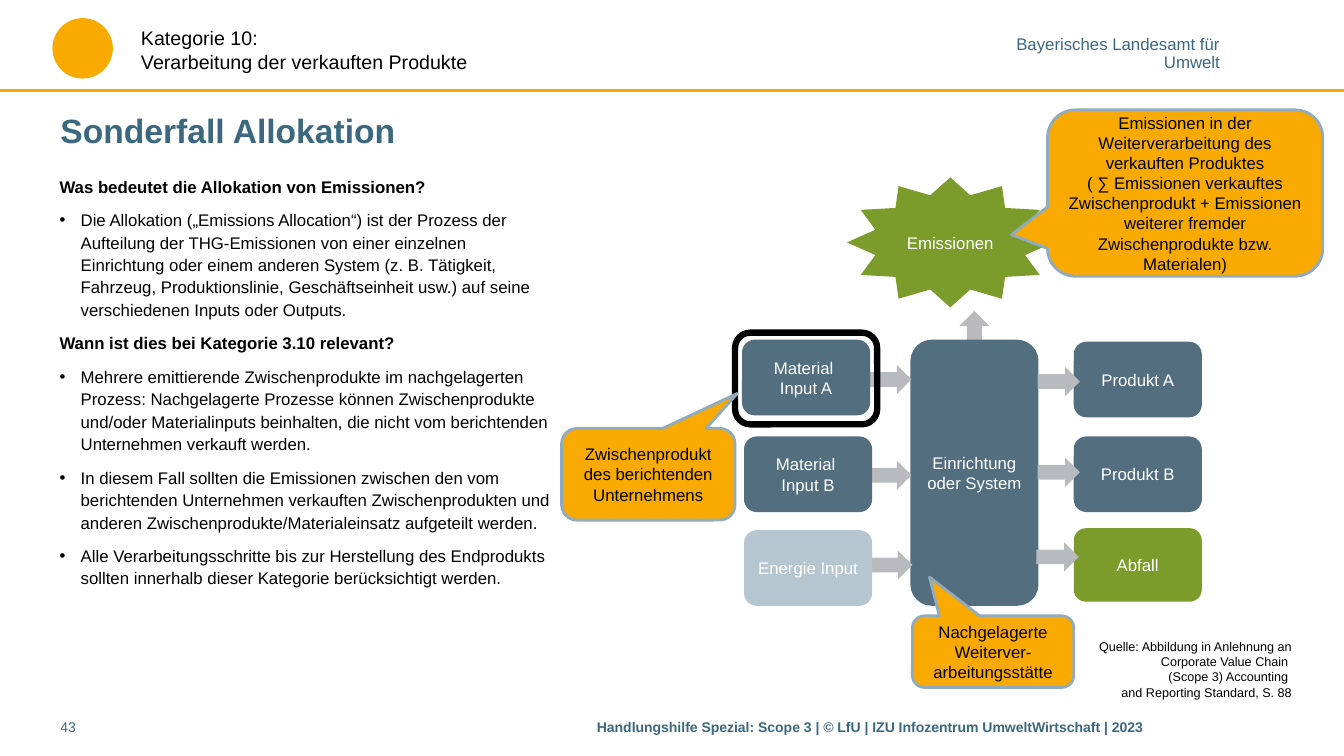
from lxml.etree import SubElement
from pptx import Presentation
from pptx.dml.color import RGBColor
from pptx.enum.shapes import MSO_CONNECTOR as CONNECTOR, MSO_SHAPE as SHAPE
from pptx.enum.text import MSO_ANCHOR as ANCHOR, MSO_AUTO_SIZE as AUTO_SIZE, PP_ALIGN as ALIGN
from pptx.oxml.ns import qn
from pptx.util import Inches, Pt

ORANGE, GREEN, SLATE, PALE = "F9AA00", "7B9C2A", "526E7F", "B6C6D0"
GREY, EDGE, BLUE, BLACK, WHITE = "B8BABD", "90ABBE", "3B687F", "000000", "FFFFFF"
BOX_WIDTH = 1.27
ARROW_SIZE = (0.42, 0.29)

BODY = [
    ("Was bedeutet die Allokation von Emissionen?", False),
    ("Die Allokation („Emissions Allocation“) ist der Prozess der Aufteilung der THG-Emissionen "
     "von einer einzelnen Einrichtung oder einem anderen System (z. B. Tätigkeit, Fahrzeug, "
     "Produktionslinie, Geschäftseinheit usw.) auf seine verschiedenen Inputs oder Outputs.", True),
    ("Wann ist dies bei Kategorie 3.10 relevant?", False),
    ("Mehrere emittierende Zwischenprodukte im nachgelagerten Prozess: Nachgelagerte Prozesse "
     "können Zwischenprodukte und/oder Materialinputs beinhalten, die nicht vom berichtenden "
     "Unternehmen verkauft werden.", True),
    ("In diesem Fall sollten die Emissionen zwischen den vom berichtenden Unternehmen verkauften "
     "Zwischenprodukten und anderen Zwischenprodukte/Materialeinsatz aufgeteilt werden.", True),
    ("Alle Verarbeitungsschritte bis zur Herstellung des Endprodukts sollten innerhalb dieser "
     "Kategorie berücksichtigt werden.", True),
]

INPUTS = [
    (7.36, 3.37, "Material \nInput A", SLATE),
    (7.38, 4.33, "Material \nInput B", SLATE),
    (7.38, 5.26, "Energie Input", PALE),
]
OUTPUTS = [
    (3.39, 0.75, "Produkt A", SLATE),
    (4.33, 0.75, "Produkt B", SLATE),
    (5.24, 0.73, "Abfall", GREEN),
]
INPUT_ARROWS = [(8.62, 3.62), (8.62, 4.57), (8.63, 5.46)]
OUTPUT_ARROWS = [(10.29, 3.64), (10.29, 4.54), (10.28, 5.38)]
CALLOUTS = [
    ((5.57, 4.25, 1.72, 0.91), (0.513, -0.881),
     "Zwischenprodukt des berichtenden Unternehmens"),
    ((10.39, 1.09, 2.73, 1.65), (-0.631, 0.25),
     "Emissionen in der Weiterverarbeitung des verkauften Produktes\n"
     "( ∑ Emissionen verkauftes Zwischenprodukt + Emissionen weiterer fremder "
     "Zwischenprodukte bzw. Materialen)"),
    ((9.05, 6.11, 1.6, 0.71), (-0.394, -1.042),
     "Nachgelagerte Weiterver-arbeitungsstätte"),
]


def rgb(color):
    return RGBColor.from_string(color)


def lengths(values):
    return [Inches(value) for value in values]


def set_values(target, values):
    for name, value in values.items():
        setattr(target, name, value)


def format_paragraph(paragraph, size, color, bold=False, **values):
    set_values(paragraph, values)
    set_values(paragraph.font, {"name": "Arial", "size": Pt(size), "bold": bold})
    paragraph.font.color.rgb = rgb(color)


def write(shape, text, size=12, color=BLACK, bold=False, align=ALIGN.LEFT, spacing=None,
          anchor=ANCHOR.TOP, side=0.1, edge=0.05, wrap=True):
    frame = shape.text_frame
    set_values(frame, {
        "word_wrap": wrap, "auto_size": AUTO_SIZE.NONE, "vertical_anchor": anchor,
        "margin_left": Inches(side), "margin_right": Inches(side),
        "margin_top": Inches(edge), "margin_bottom": Inches(edge),
    })
    frame.text = text
    for paragraph in frame.paragraphs:
        format_paragraph(paragraph, size, color, bold, alignment=align, line_spacing=spacing)


def add_text(slide, box, text, **values):
    shape = slide.shapes.add_textbox(*lengths(box))
    write(shape, text, **values)
    return shape


def add_figure(slide, kind, box, fill=None, text="", color=WHITE, line=None, width=2):
    shape = slide.shapes.add_shape(kind, *lengths(box))
    shape.shadow.inherit = False
    if fill:
        shape.fill.solid()
        shape.fill.fore_color.rgb = rgb(fill)
    else:
        shape.fill.background()
    if line:
        shape.line.color.rgb = rgb(line)
        shape.line.width = Pt(width)
    else:
        shape.line.fill.background()
    if text:
        write(shape, text, color=color, align=ALIGN.CENTER, anchor=ANCHOR.MIDDLE)
    return shape


def add_arrows(slide, positions):
    for position in positions:
        add_figure(slide, SHAPE.RIGHT_ARROW, position + ARROW_SIZE, GREY)


def add_callout(slide, box, tip, text):
    callout = add_figure(slide, SHAPE.ROUNDED_RECTANGULAR_CALLOUT, box, ORANGE, text, BLACK, EDGE)
    for index, value in enumerate(tip):
        callout.adjustments[index] = value


def add_bullet(paragraph):
    properties = paragraph._p.get_or_add_pPr()
    properties.set("marL", str(Inches(0.21)))
    properties.set("indent", str(-Inches(0.21)))
    SubElement(properties, qn("a:buFont"), typeface="Arial")
    SubElement(properties, qn("a:buChar"), char="•")


def add_header(slide):
    rule = slide.shapes.add_connector(CONNECTOR.STRAIGHT, *lengths((0, 0.9, 13.33, 0.9)))
    rule.line.color.rgb = rgb(ORANGE)
    rule.line.width = Pt(2)
    SubElement(rule._element.spPr, qn("a:effectLst"))
    add_text(slide, (10.07, 0.37, 2.03, 0.34), "Bayerisches Landesamt für\nUmwelt",
             color=BLUE, align=ALIGN.RIGHT, spacing=0.85, side=0, edge=0, wrap=False)
    add_figure(slide, SHAPE.OVAL, (0.52, 0.18, 0.6, 0.6), ORANGE)
    add_text(slide, (1.3, 0.21, 4.25, 0.57),
             "Kategorie 10:\nVerarbeitung der verkauften Produkte", size=14)


def add_title(slide, text):
    title = slide.shapes.title
    box = lengths((0.6, 1.02, 12.31, 0.55))
    set_values(title, dict(zip(("left", "top", "width", "height"), box)))
    write(title, text, size=24, color=BLUE, bold=True, anchor=ANCHOR.MIDDLE, side=0)


def add_body(slide):
    shape = add_text(slide, (0.59, 1.68, 4.89, 5.14),
                     "\n".join(text for text, _ in BODY), side=0)
    for index, (paragraph, (_, bulleted)) in enumerate(zip(shape.text_frame.paragraphs, BODY)):
        if bulleted:
            add_bullet(paragraph)
        format_paragraph(paragraph, 12, BLACK, not bulleted, line_spacing=Pt(16),
                         space_before=Pt(8 if index else 0))


def add_diagram(slide):
    rounded = SHAPE.ROUNDED_RECTANGLE
    up_arrow = add_figure(slide, SHAPE.RIGHT_ARROW, (9.42, 3.18, 0.49, 0.3), GREY)
    up_arrow.rotation = 270
    add_figure(slide, rounded, (9.03, 3.37, BOX_WIDTH, 2.64), SLATE, "Einrichtung oder System")
    add_arrows(slide, INPUT_ARROWS)
    add_figure(slide, SHAPE.STAR_12_POINT, (8.4, 1.76, 2.05, 1.29), GREEN, "Emissionen")
    add_figure(slide, rounded, (7.29, 3.3, 1.41, 0.91), line=BLACK, width=4.5)
    for box, tip, text in CALLOUTS:
        add_callout(slide, box, tip, text)
    for left, top, text, fill in INPUTS:
        add_figure(slide, rounded, (left, top, BOX_WIDTH, 0.75), fill, text)
    for top, height, text, fill in OUTPUTS:
        add_figure(slide, rounded, (10.65, top, BOX_WIDTH, height), fill, text)
    add_arrows(slide, OUTPUT_ARROWS)


def add_footer(slide):
    add_text(slide, (10.64, 6.29, 2.27, 0.71),
             "Quelle: Abbildung in Anlehnung an Corporate Value Chain \n"
             "(Scope 3) Accounting \nand Reporting Standard, S. 88", size=9, align=ALIGN.RIGHT)
    add_text(slide, (5.92, 7.08, 6.99, 0.31),
             "Handlungshilfe Spezial: Scope 3 | © LfU | IZU Infozentrum UmweltWirtschaft | 2023",
             size=10, color=BLUE, bold=True, side=0)
    add_text(slide, (0.6, 7.08, 0.7, 0.31), "43", size=10, color=BLUE, side=0)


def main():
    presentation = Presentation()
    presentation.slide_width = Inches(13.33)
    presentation.slide_height = Inches(7.5)
    slide = presentation.slides.add_slide(presentation.slide_layouts[5])
    add_header(slide)
    add_title(slide, "Sonderfall Allokation")
    add_body(slide)
    add_diagram(slide)
    add_footer(slide)
    presentation.save("out.pptx")


if __name__ == "__main__":
    main()
